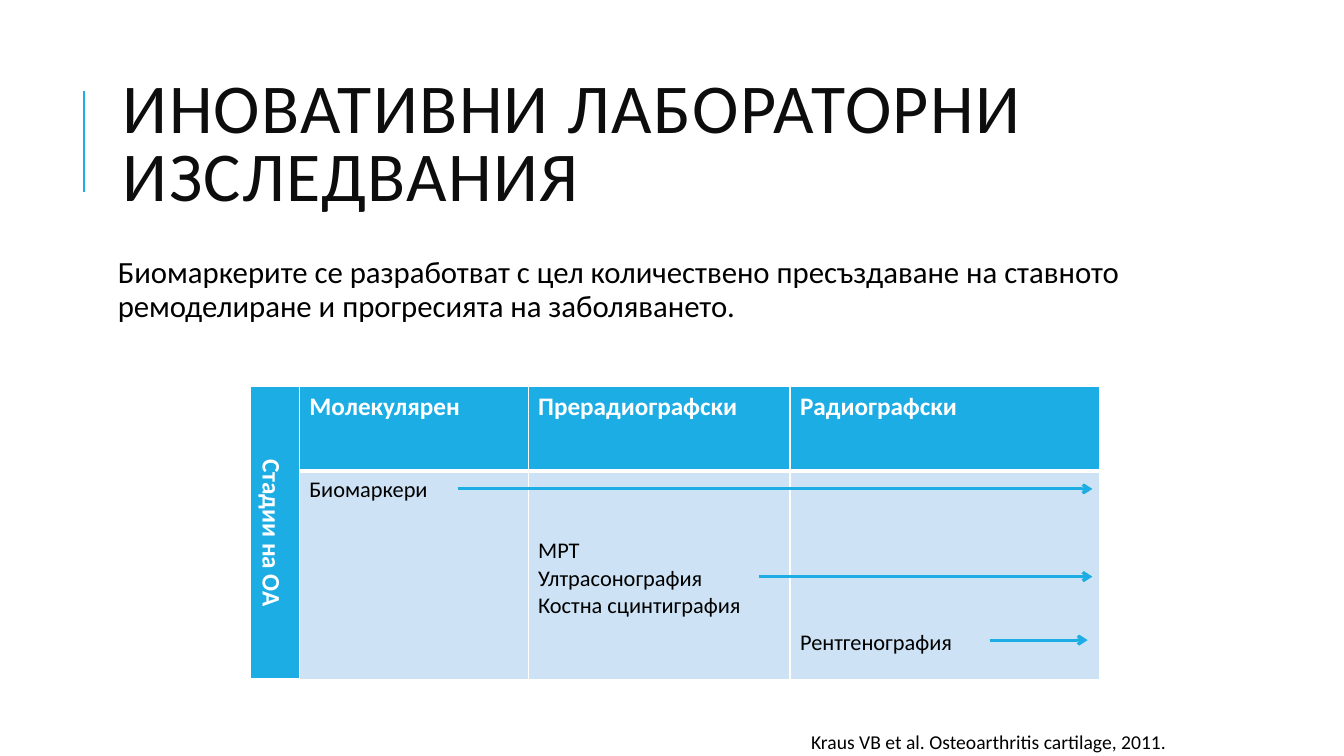
from lxml import etree
from pptx import Presentation
from pptx.dml.color import RGBColor
from pptx.enum.shapes import MSO_CONNECTOR
from pptx.enum.text import MSO_ANCHOR, MSO_AUTO_SIZE, PP_ALIGN
from pptx.oxml.ns import qn
from pptx.util import Cm, Pt

STRAIGHT = MSO_CONNECTOR.STRAIGHT
MIDDLE, TOP = MSO_ANCHOR.MIDDLE, MSO_ANCHOR.TOP
LEFT, CENTER = PP_ALIGN.LEFT, PP_ALIGN.CENTER
NO_AUTOFIT = MSO_AUTO_SIZE.NONE
FONT = "Calibri"
COLORS = {"accent": "1CADE4", "pale": "CDE3F5", "white": "FFFFFF",
          "title": "0D0D0D", "text": "000000"}


def style_paragraph(paragraph, size, color, bold=False, align=LEFT):
    paragraph.alignment = align
    font = paragraph.font
    font.name, font.size, font.bold = FONT, Pt(size), bold
    font.color.rgb = RGBColor.from_string(COLORS[color])


def add_line(start, end, width, arrow=False):
    """Draw an accent-coloured line between two (x, y) points in cm."""
    connector = slide.shapes.add_connector(
        STRAIGHT, *(Cm(value) for value in start + end))
    connector.line.color.rgb = RGBColor.from_string(COLORS["accent"])
    connector.line.width = Pt(width)
    if arrow:
        line = connector.line._get_or_add_ln()
        etree.SubElement(line, qn("a:tailEnd"), type="arrow")
    etree.SubElement(connector._element.spPr, qn("a:effectLst"))


prs = Presentation()
prs.slide_width, prs.slide_height = Cm(33.87), Cm(19.05)
slide = prs.slides.add_slide(prs.slide_layouts[1])

add_line((2.12, 4.83), (2.12, 2.29), 1.5)

# Title and introduction
title, intro = slide.placeholders
title.left, title.top, title.width, title.height = Cm(2.84), Cm(1.63), Cm(27), Cm(4.17)
title.text_frame.text = "ИНОВАТИВНИ ЛАБОРАТОРНИ ИЗСЛЕДВАНИЯ"
title.text_frame.auto_size = NO_AUTOFIT
title.text_frame.vertical_anchor = MIDDLE
heading = title.text_frame.paragraphs[0]
style_paragraph(heading, 50, "title")
heading.line_spacing = 0.8
heading.runs[0].font._element.set("spc", "100")

intro.left, intro.top, intro.width, intro.height = Cm(2.84), Cm(6.35), Cm(27), Cm(11.18)
intro_frame = intro.text_frame
intro_frame.text = ("Биомаркерите се разработват с цел количествено пресъздаване "
                    "на ставното ремоделиране и прогресията на заболяването.")
intro_frame.auto_size = NO_AUTOFIT
intro_frame.vertical_anchor = TOP
intro_frame.margin_left = intro_frame.margin_right = Cm(0.13)
intro_frame.margin_top = intro_frame.margin_bottom = Cm(0.13)
aim = intro_frame.paragraphs[0]
style_paragraph(aim, 22, "text")
aim.line_spacing, aim.space_before, aim.space_after = 0.9, Pt(12), Pt(2)
aim_properties = aim._p.get_or_add_pPr()
aim_properties.set("marL", "0")
aim_properties.set("indent", "0")
aim_properties.insert_element_before(
    etree.Element(qn("a:buNone")), "a:tabLst", "a:defRPr", "a:extLst")

# Stages of osteoarthritis: heading, methods, top margin of the methods in cm
STAGES = [
    ("Молекулярен", "Биомаркери", 0.13),
    ("Прерадиографски", "МРТ\nУлтрасонография\nКостна сцинтиграфия", 1.68),
    ("Радиографски", "Рентгенография", 4),
]
stage_table = slide.shapes.add_table(
    2, 4, Cm(6.32), Cm(9.73), Cm(21.39), Cm(7.39)).table
for column, width in zip(stage_table.columns, (1.22, 5.77, 6.6, 7.8)):
    column.width = Cm(width)
for row, height in zip(stage_table.rows, (2.13, 5.26)):
    row.height = Cm(height)

stages_label = stage_table.cell(0, 0)
stages_label.merge(stage_table.cell(1, 0))
stages_label.text = "Стадии на ОА"
for column, (stage, methods, top_margin) in enumerate(STAGES, start=1):
    stage_table.cell(0, column).text = stage
    methods_cell = stage_table.cell(1, column)
    methods_cell.text = methods
    methods_cell.margin_top = Cm(top_margin)

for row in range(2):
    for column in range(4):
        cell = stage_table.cell(row, column)
        is_header = row == 0 or column == 0
        cell_properties = cell._tc.get_or_add_tcPr()
        for side in "LRTB":
            thick = side == "B" and is_header or side == "T" and row == 1
            border = etree.SubElement(cell_properties, qn(f"a:ln{side}"),
                                      w=str(Pt(3 if thick else 1)))
            border_fill = etree.SubElement(border, qn("a:solidFill"))
            etree.SubElement(border_fill, qn("a:srgbClr"), val=COLORS["white"])
        cell.fill.solid()
        cell.fill.fore_color.rgb = RGBColor.from_string(
            COLORS["accent" if is_header else "pale"])
        for paragraph in cell.text_frame.paragraphs:
            if is_header:
                style_paragraph(paragraph, 18, "white", bold=True,
                                align=LEFT if column else CENTER)
            else:
                style_paragraph(paragraph, 16, "text")
stages_label._tc.get_or_add_tcPr().set("vert", "vert")

# Each method stays useful from its stage onwards
for start_x, end_x, y in [(11.53, 27.53, 12.32), (19.13, 27.53, 14.53),
                          (24.94, 27.41, 16.13)]:
    add_line((start_x, y), (end_x, y), 2.25, arrow=True)

citation = slide.shapes.add_textbox(Cm(20.19), Cm(18.26), Cm(11.43), Cm(0.86))
citation.text_frame.word_wrap = False
citation.text_frame.text = "Kraus VB et al. Osteoarthritis cartilage, 2011."
style_paragraph(citation.text_frame.paragraphs[0], 14, "text")

prs.save("out.pptx")
